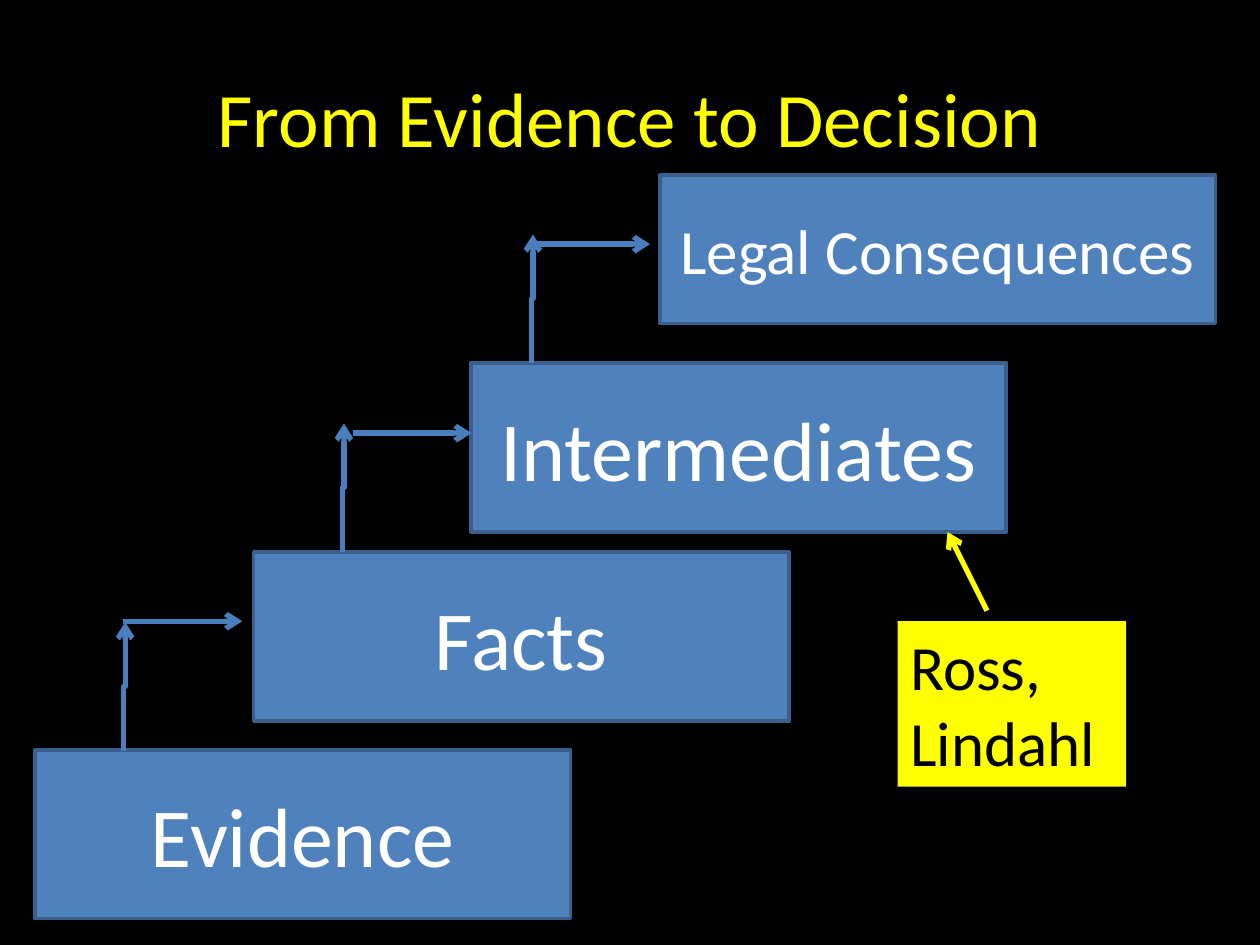
from lxml import etree
from pptx import Presentation
from pptx.dml.color import RGBColor
from pptx.enum.shapes import MSO_CONNECTOR, MSO_SHAPE
from pptx.enum.text import MSO_ANCHOR, PP_ALIGN
from pptx.oxml.ns import qn
from pptx.util import Pt

RECT = MSO_SHAPE.RECTANGLE
STRAIGHT, ELBOW = MSO_CONNECTOR.STRAIGHT, MSO_CONNECTOR.ELBOW
MIDDLE, TOP = MSO_ANCHOR.MIDDLE, MSO_ANCHOR.TOP
CENTER, LEFT = PP_ALIGN.CENTER, PP_ALIGN.LEFT

THEME = {
    "font": "Calibri",
    "black": RGBColor(0x00, 0x00, 0x00),
    "white": RGBColor(0xFF, 0xFF, 0xFF),
    "yellow": RGBColor(0xFF, 0xFF, 0x00),
    "box": RGBColor(0x4F, 0x81, 0xBD),
    "edge": RGBColor(0x3A, 0x5F, 0x8C),
    "arrow": RGBColor(0x4B, 0x7E, 0xBC),
    "title": 44, "step": 48, "small": 36,
    "edge_width": 2, "arrow_width": 3,
}

# Content, lengths in points
TITLE = ("From Evidence to Decision", (36, 21.6, 648, 90))
STEPS = [  # text, type size, box
    ("Evidence", "step", (20, 428.5, 306, 96.5)),
    ("Facts", "step", (145, 315.5, 306, 96.5)),
    ("Intermediates", "step", (269, 207.5, 306, 96.5)),
    ("Legal Consequences", "small", (377, 100, 317.5, 85)),
]
RISERS = [(70.5, 429), (195.5, 315.5), (303.5, 207.5)]  # foot of each riser
RISE, JOG = 73.5, 1
ACROSS = [(70.5, 355), (201.5, 247.5), (303.5, 139.5)]  # start of each arrow
REACH = 68
NOTE = (["Ross,", "Lindahl"], (513, 355, 130.5, 94.5))
POINTER = (564, 349, 541.5, 304)


def pts(values):
    return [Pt(v) for v in values]


def write(s, lines, size, color, align, anchor):
    tf = s.text_frame
    tf.word_wrap = True
    tf.vertical_anchor = anchor
    for i, line in enumerate(lines):
        p = tf.paragraphs[0] if i == 0 else tf.add_paragraph()
        p.alignment = align
        r = p.add_run()
        r.text = line
        r.font.name = THEME["font"]
        r.font.size = Pt(THEME[size])
        r.font.color.rgb = THEME[color]


def add_box(shapes, box, fill, edge=None):
    s = shapes.add_shape(RECT, *pts(box))
    s.shadow.inherit = False
    s.fill.solid()
    s.fill.fore_color.rgb = THEME[fill]
    if edge:
        s.line.color.rgb = THEME[edge]
        s.line.width = Pt(THEME["edge_width"])
    else:
        s.line.fill.background()
    return s


def add_arrow(shapes, kind, ends, color):
    c = shapes.add_connector(kind, *pts(ends))
    c.line.color.rgb = THEME[color]
    c.line.width = Pt(THEME["arrow_width"])
    etree.SubElement(c.line._get_or_add_ln(), qn("a:tailEnd"), type="arrow")
    etree.SubElement(c._element.spPr, qn("a:effectLst"))
    return c


def add_riser(shapes, x, y):
    # An elbow runs sideways first, so lay it flat and turn it a quarter
    cx, cy = x + JOG / 2, y - RISE / 2
    ends = (cx + RISE / 2, cy + JOG / 2, cx - RISE / 2, cy - JOG / 2)
    c = add_arrow(shapes, ELBOW, ends, "arrow")
    c._element.spPr.find(qn("a:xfrm")).set("rot", str(90 * 60000))


def main():
    prs = Presentation()
    prs.slide_width, prs.slide_height = Pt(720), Pt(540)
    slide = prs.slides.add_slide(prs.slide_layouts[6])
    slide.background.fill.solid()
    slide.background.fill.fore_color.rgb = THEME["black"]
    shapes = slide.shapes

    # Title
    text, box = TITLE
    write(shapes.add_textbox(*pts(box)), [text], "title", "yellow", CENTER, MIDDLE)

    # Staircase of steps
    for text, size, box in STEPS:
        s = add_box(shapes, box, "box", "edge")
        write(s, [text], size, "white", CENTER, MIDDLE)

    # Arrows up and across to the next step
    for x, y in RISERS:
        add_riser(shapes, x, y)
    for x, y in ACROSS:
        add_arrow(shapes, STRAIGHT, (x, y, x + REACH, y), "arrow")

    # Note with its pointer
    lines, box = NOTE
    write(add_box(shapes, box, "yellow"), lines, "small", "black", LEFT, TOP)
    add_arrow(shapes, STRAIGHT, POINTER, "yellow")

    prs.save("out.pptx")


if __name__ == "__main__":
    main()
